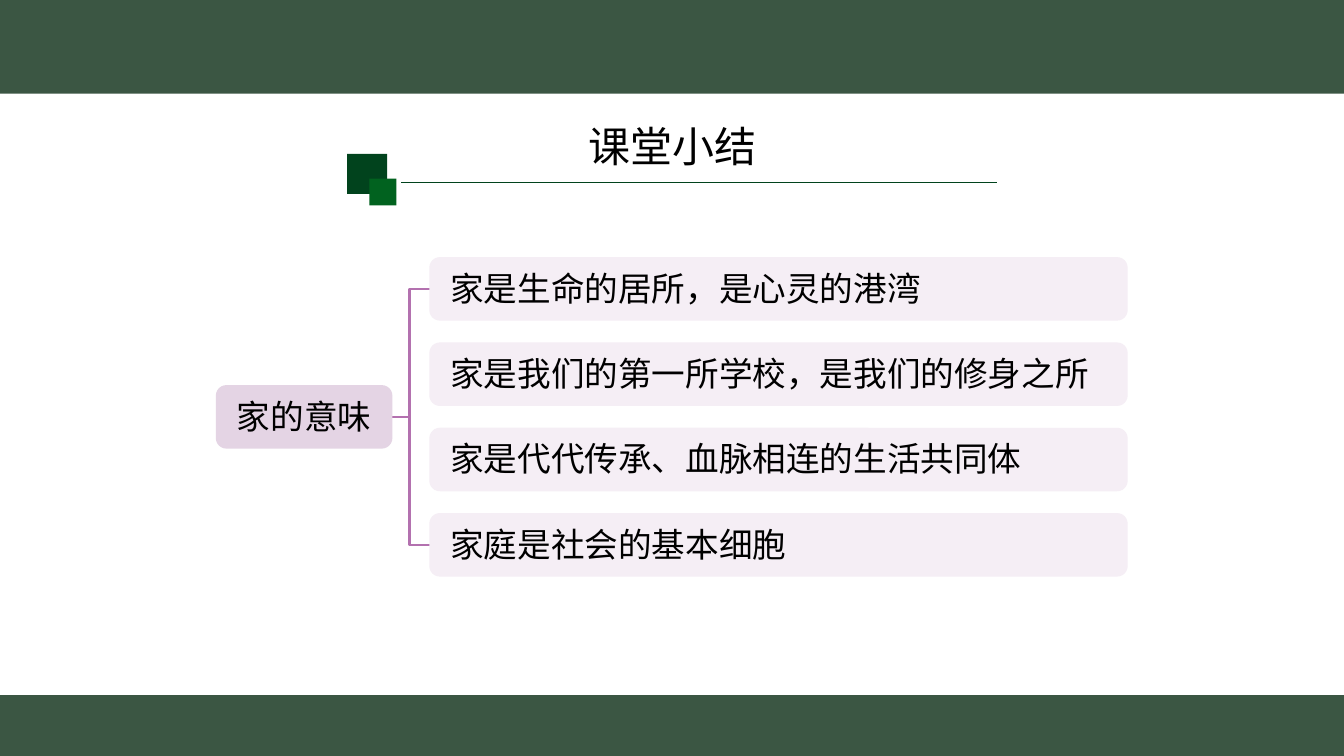
from pptx import Presentation
from pptx.util import Cm, Pt
from pptx.dml.color import RGBColor
from pptx.enum.shapes import MSO_SHAPE as Kind, MSO_CONNECTOR as Link
from pptx.enum.text import PP_ALIGN as Align, MSO_ANCHOR as Anchor
from pptx.oxml.ns import qn
from lxml.etree import SubElement

# Content
TITLE = "课堂小结"
ROOT = "家的意味"
POINTS = [
    "家是生命的居所，是心灵的港湾",
    "家是我们的第一所学校，是我们的修身之所",
    "家是代代传承、血脉相连的生活共同体",
    "家庭是社会的基本细胞",
]


class Theme:
    font = "Noto Sans CJK SC"
    ink = "000000"
    band = "3B5643"
    dark = "01431D"
    green = "01621F"
    brace = "B371AF"
    root = "E4D4E4"
    leaf = "F5EEF5"
    head = 30
    body = 24


# Layout in centimetres
WIDE, TALL = 33.87, 19.05
BAR = 1.6                # height of each rounded bar
TOP, STEP = 6.48, 2.15   # first bar and distance between bars
LEFT, SPAN = 10.82, 17.6
SPREAD = STEP * (len(POINTS) - 1)
MID = TOP + BAR / 2

deck = Presentation()
deck.slide_width, deck.slide_height = Cm(WIDE), Cm(TALL)
slide = deck.slides.add_slide(deck.slide_layouts[6])
shapes = slide.shapes


def color(code):
    return RGBColor.from_string(code)


def block(x, y, w, h, fill, kind=Kind.RECTANGLE):
    shape = shapes.add_shape(kind, Cm(x), Cm(y), Cm(w), Cm(h))
    shape.shadow.inherit = False
    shape.fill.solid()
    shape.fill.fore_color.rgb = color(fill)
    shape.line.fill.background()


def write(text, x, y, w, h, size=Theme.body, align=Align.LEFT,
          anchor=Anchor.MIDDLE, wrap=False, space=1.0, inset=0.13):
    frame = shapes.add_textbox(Cm(x), Cm(y), Cm(w), Cm(h)).text_frame
    frame.word_wrap = wrap
    frame.vertical_anchor = anchor
    frame.margin_top = frame.margin_bottom = Cm(inset)
    para = frame.paragraphs[0]
    para.alignment, para.line_spacing = align, space
    run = para.add_run()
    run.text = text
    run.font.name, run.font.size = Theme.font, Pt(size)
    run.font.color.rgb = color(Theme.ink)
    SubElement(run._r.get_or_add_rPr(), qn("a:ea"), typeface=Theme.font)


def label(text, x, y, w, fill):
    block(x, y, w, BAR, fill, Kind.ROUNDED_RECTANGLE)
    wide = len(text) * Cm(1).pt ** -1 * Theme.body + 0.6
    write(text, x + 0.28, y + 0.14, wide, 1.27)


# Bands at the top and bottom
block(0, 0, WIDE, 2.36, Theme.band)
block(0, 17.52, WIDE, TALL - 17.52, Theme.band)

# Title rule and squares
rule = shapes.add_connector(Link.STRAIGHT, Cm(10.11), Cm(4.6), Cm(25.12), Cm(4.6))
rule.line.color.rgb, rule.line.width = color(Theme.dark), Pt(1)
SubElement(rule._element.spPr, qn("a:effectLst"))
block(8.75, 3.88, 1.01, 1.01, Theme.dark)
block(9.31, 4.5, 0.68, 0.68, Theme.green)

# Brace from the root to the points
brace = shapes.add_shape(Kind.LEFT_BRACE, Cm(9.73), Cm(MID), Cm(1.19), Cm(SPREAD))
brace.adjustments[0], brace.adjustments[1] = 0, 0.5
brace.shadow.inherit = False
brace.fill.background()
brace.line.color.rgb, brace.line.width = color(Theme.brace), Pt(1.75)

# Points and root
for row, point in enumerate(POINTS):
    label(point, LEFT, TOP + row * STEP, SPAN, Theme.leaf)
label(ROOT, 5.44, TOP + SPREAD / 2, 4.45, Theme.root)

# Title
write(TITLE, 5.54, 3.18, 22.81, 1.6, size=Theme.head, align=Align.CENTER,
      anchor=Anchor.TOP, wrap=True, space=0.9, inset=0)

deck.save("out.pptx")
